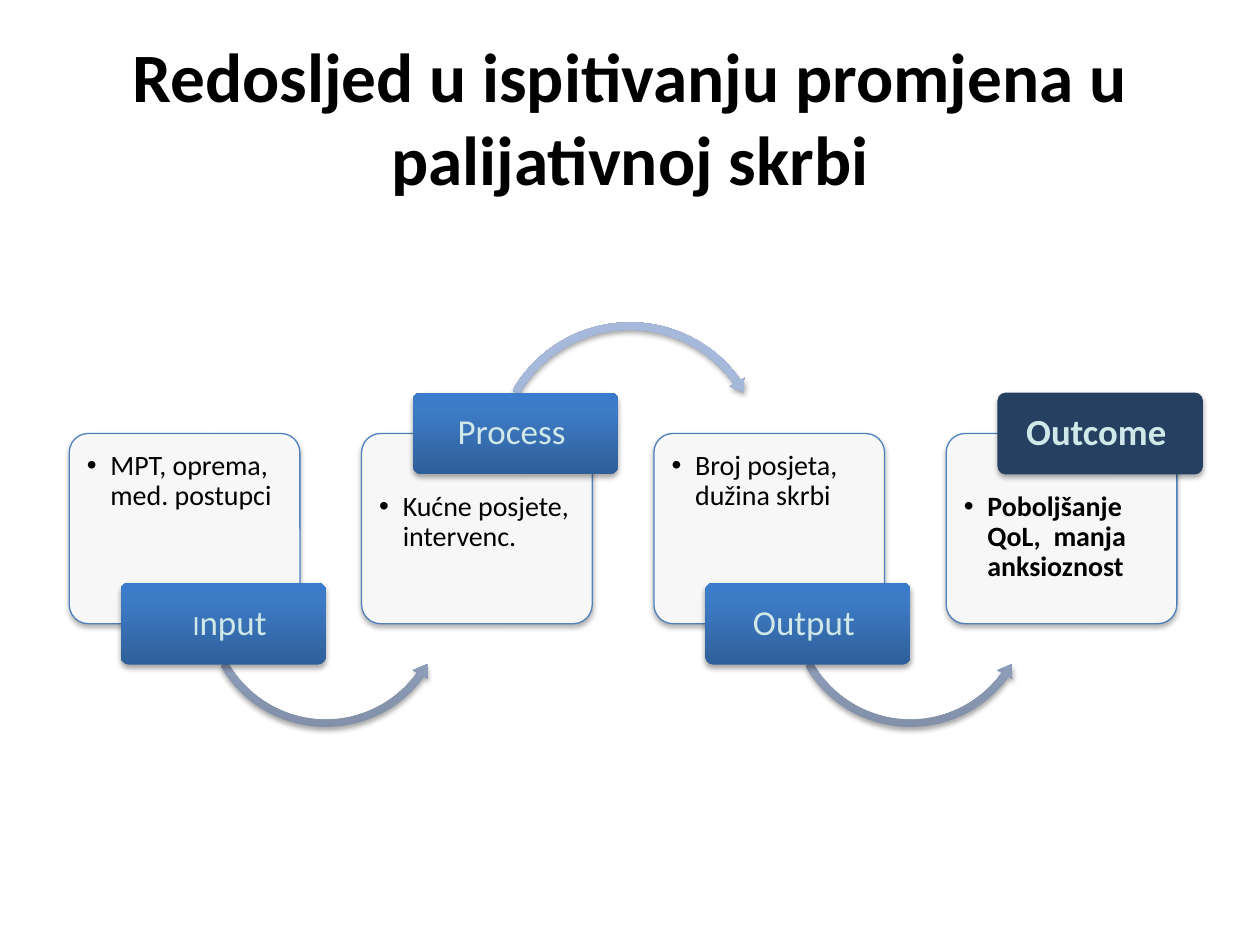
"""Build a slide with four linked stages of change in palliative care."""
from copy import deepcopy
from dataclasses import dataclass

from lxml import etree
from pptx import Presentation
from pptx import util as u
from pptx.dml.color import RGBColor
from pptx.enum import shapes, text
from pptx.oxml import ns

BLACK = RGBColor(0x00, 0x00, 0x00)
WHITE = RGBColor(0xFF, 0xFF, 0xFF)
PALE = RGBColor(0xD0, 0xE8, 0xE8)
BLUE = RGBColor(0x4F, 0x81, 0xBD)
NAVY = RGBColor(0x25, 0x40, 0x61)
LABEL_BLUES = (RGBColor(0x2F, 0x5F, 0x99), RGBColor(0x3D, 0x7C, 0xC7), RGBColor(0x3A, 0x7C, 0xCB))
ARROW_BLUES = (RGBColor(0x81, 0x8F, 0xA8), RGBColor(0xA7, 0xB9, 0xDA), RGBColor(0xA7, 0xBA, 0xDC))

FONT = "Calibri"
ROUND = shapes.MSO_SHAPE.ROUNDED_RECTANGLE
CARD_LEFT, CARD_TOP, CARD_STEP = 39.6, 247.7, 167.04
CARD_WIDTH, CARD_HEIGHT = 131.8, 108.7
LABEL_WIDTH, LABEL_HEIGHT, LABEL_SHIFT = 117.4, 46.8, 29.3
CARD_INSET, LABEL_INSET = 6.9, 1.5


@dataclass(frozen=True)
class Arrow:
    kind: shapes.MSO_SHAPE
    shift: float
    top: float
    size: float
    adjustments: tuple[float, ...]


@dataclass(frozen=True)
class Stage:
    label: tuple[tuple[str, float], ...]
    body: str
    label_on_top: bool
    arrow: Arrow | None
    pad_left: float = 0
    pad_right: float = 4.5
    final: bool = False


UNDER = Arrow(shapes.MSO_SHAPE.LEFT_CIRCULAR_ARROW, 74.9, 275, 143.3,
              (0.03, 3.637, 21.392, 90.245, 0.035))
OVER = Arrow(shapes.MSO_SHAPE.CIRCULAR_ARROW, 73.4, 181.4, 159.8,
             (0.027, 3.23, 195.015, 125.755, 0.031))

STAGES = (
    Stage((("I", 16), ("nput", 20)), "MPT, oprema, med. postupci", False, UNDER, 7.2, 0),
    Stage((("Process", 20),), "Kućne posjete, intervenc.", True, OVER),
    Stage((("Output", 20),), "Broj posjeta, dužina skrbi", False, UNDER),
    Stage((("Outcome", 21),), "Poboljšanje QoL,  manja anksioznost", True, None, final=True),
)


def add_child(parent, tag: str, **attributes: str):
    return etree.SubElement(parent, ns.qn(tag), attributes)


def add_span(para, words: str, size: float, color: RGBColor, bold: bool) -> None:
    span = para.add_run()
    span.text = words
    span.font.name = FONT
    span.font.size = u.Pt(size)
    span.font.bold = bold
    span.font.color.rgb = color


def add_box(page, kind, left: float, top: float, width: float, height: float,
            adjustments: tuple[float, ...]):
    box = page.shapes.add_shape(kind, u.Pt(left), u.Pt(top), u.Pt(width), u.Pt(height))
    for index, value in enumerate(adjustments):
        box.adjustments[index] = value
    box.line.fill.background()
    box.shadow.inherit = False
    effects = box._element.spPr.find(ns.qn("a:effectLst"))
    shadow = add_child(effects, "a:outerShdw", blurRad=str(u.Pt(3.1)), dist=str(u.Pt(1.8)),
                       dir="5400000", rotWithShape="0")
    add_child(add_child(shadow, "a:srgbClr", val=str(BLACK)), "a:alpha", val="35000")
    return box


def fill_gradient(box, colors: tuple[RGBColor, ...]) -> None:
    box.fill.gradient()
    box.fill.gradient_angle = 90
    stop_list = next(box._element.spPr.iter(ns.qn("a:gsLst")))
    stop_list.append(deepcopy(stop_list[-1]))
    for stop, color, position in zip(box.fill.gradient_stops, colors, (0, 0.8, 1)):
        stop.color.rgb = color
        stop.position = position


def set_frame(box, anchor, left: float, top: float, right: float, bottom: float):
    frame = box.text_frame
    frame.word_wrap = True
    frame.vertical_anchor = anchor
    frame.margin_left, frame.margin_top = u.Pt(left), u.Pt(top)
    frame.margin_right, frame.margin_bottom = u.Pt(right), u.Pt(bottom)
    para = frame.paragraphs[0]
    para.line_spacing = 0.9
    return para


def add_card(page, stage: Stage, left: float) -> None:
    card = add_box(page, ROUND, left, CARD_TOP, CARD_WIDTH, CARD_HEIGHT, (0.1,))
    card.fill.solid()
    card.fill.fore_color.rgb = WHITE
    add_child(next(card._element.spPr.iter(ns.qn("a:srgbClr"))), "a:alpha", val="90000")
    card.line.color.rgb = BLUE
    card.line.width = u.Pt(0.75)
    top_inset = CARD_INSET + (LABEL_HEIGHT / 2 if stage.label_on_top else 0)
    para = set_frame(card, text.MSO_ANCHOR.TOP, CARD_INSET, top_inset, CARD_INSET, CARD_INSET)
    para.alignment = text.PP_ALIGN.LEFT
    properties = para._p.get_or_add_pPr()
    properties.set("marL", str(u.Pt(13.5)))
    properties.set("indent", str(u.Pt(-13.5)))
    add_child(properties, "a:buFont", typeface="Arial")
    add_child(properties, "a:buChar", char="•")
    add_span(para, stage.body, 16, BLACK, stage.final)


def add_arrow(page, arrow: Arrow, left: float) -> None:
    box = add_box(page, arrow.kind, left + arrow.shift, arrow.top, arrow.size, arrow.size,
                  arrow.adjustments)
    fill_gradient(box, ARROW_BLUES)


def add_label(page, stage: Stage, left: float) -> None:
    edge = CARD_TOP if stage.label_on_top else CARD_TOP + CARD_HEIGHT
    label = add_box(page, ROUND, left + LABEL_SHIFT, edge - LABEL_HEIGHT / 2,
                    LABEL_WIDTH, LABEL_HEIGHT, (0.1,))
    if stage.final:
        label.fill.solid()
        label.fill.fore_color.rgb = NAVY
    else:
        fill_gradient(label, LABEL_BLUES)
    para = set_frame(label, text.MSO_ANCHOR.MIDDLE, LABEL_INSET + stage.pad_left, LABEL_INSET,
                     LABEL_INSET + stage.pad_right, LABEL_INSET)
    para.alignment = text.PP_ALIGN.CENTER
    for words, size in stage.label:
        add_span(para, words, size, PALE, stage.final)


def add_title(page, words: str) -> None:
    title = page.shapes.title
    title.left, title.top = u.Pt(36), u.Pt(21.6)
    title.width, title.height = u.Pt(648), u.Pt(90)
    title.text_frame.auto_size = text.MSO_AUTO_SIZE.NONE
    title.text_frame.vertical_anchor = text.MSO_ANCHOR.MIDDLE
    para = title.text_frame.paragraphs[0]
    para.alignment = text.PP_ALIGN.CENTER
    add_span(para, words, 39.6, BLACK, True)


def main() -> None:
    deck = Presentation()
    deck.slide_width, deck.slide_height = u.Pt(720), u.Pt(540)
    page = deck.slides.add_slide(deck.slide_layouts.get_by_name("Title Only"))
    add_title(page, "Redosljed u ispitivanju promjena u palijativnoj skrbi")
    for index, stage in enumerate(STAGES):
        left = CARD_LEFT + index * CARD_STEP
        add_card(page, stage, left)
        if stage.arrow:
            add_arrow(page, stage.arrow, left)
        add_label(page, stage, left)
    deck.save("out.pptx")


if __name__ == "__main__":
    main()
